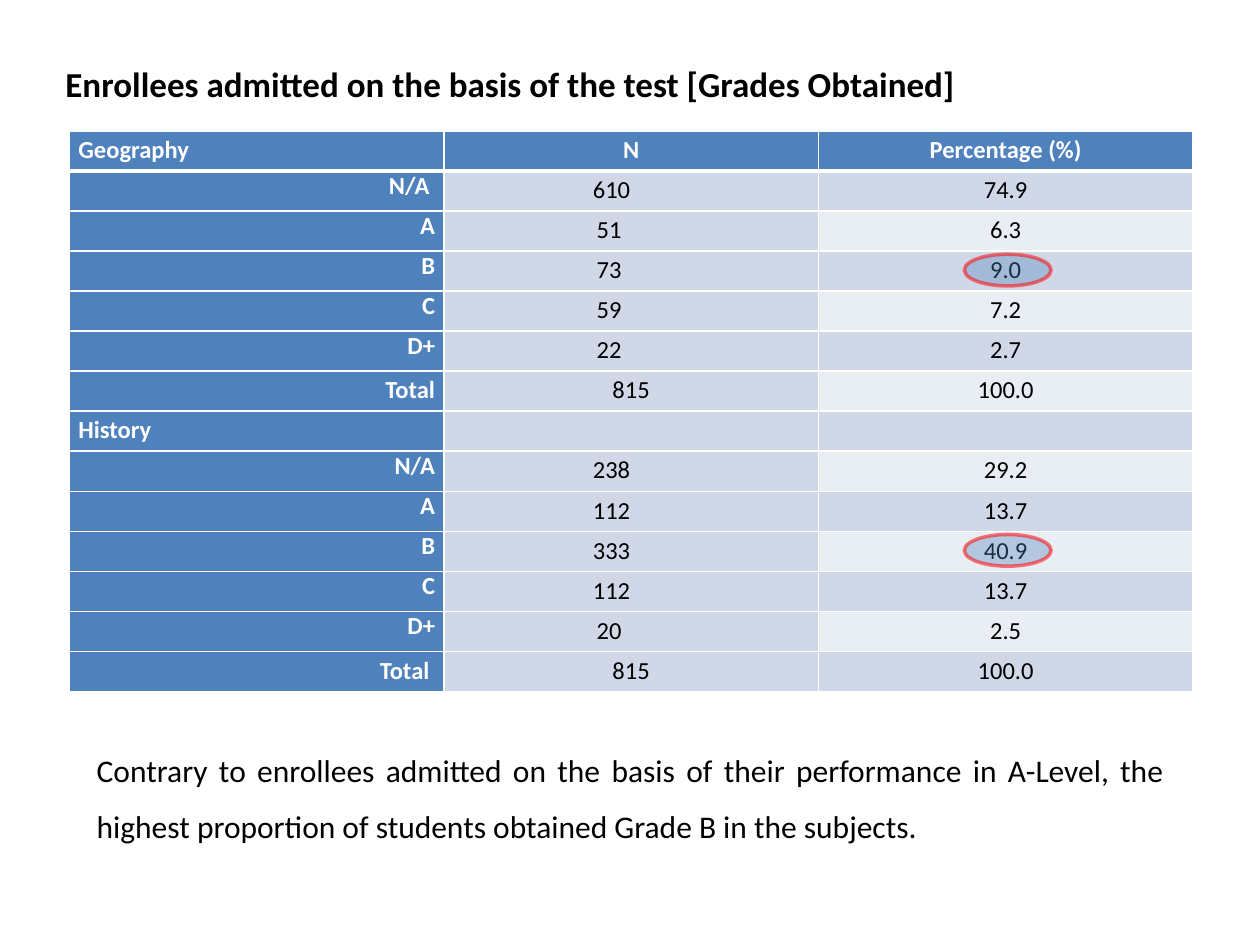
from lxml import etree
from pptx import Presentation
from pptx.dml.color import RGBColor
from pptx.enum.shapes import MSO_SHAPE
from pptx.enum.text import MSO_AUTO_SIZE, PP_ALIGN
from pptx.oxml.ns import qn
from pptx.util import Cm, Pt

LEFT, CENTER, RIGHT = PP_ALIGN.LEFT, PP_ALIGN.CENTER, PP_ALIGN.RIGHT
JUSTIFY = PP_ALIGN.JUSTIFY
OVAL = MSO_SHAPE.OVAL
GROW = MSO_AUTO_SIZE.SHAPE_TO_FIT_TEXT

BLUE, BAND, PALE = "4F81BD", "D0D8E8", "E9EDF4"
WHITE, BLACK, RED = "FFFFFF", "000000", "FF0000"

HEADINGS = ("Geography", "N", "Percentage (%)")
RESULTS = [
    HEADINGS,
    ("N/A ", "610", "74.9"),
    ("A", "51", "6.3"),
    ("B", "73", "9.0"),
    ("C", "59", "7.2"),
    ("D+", "22", "2.7"),
    ("Total", "815", "100.0"),
    ("History", "", ""),
    ("N/A", "238", "29.2"),
    ("A", "112", "13.7"),
    ("B", "333", "40.9"),
    ("C", "112", "13.7"),
    ("D+", "20", "2.5"),
    ("Total ", "815", "100.0"),
]
SUBJECTS = ("Geography", "History")
HIGHLIGHTED_ROWS = (3, 10)
COUNT_SHIFT = {2: 0.89, 3: 0.79}


def rgb(color):
    return RGBColor.from_string(color)


def write(frame, text, size, color, bold=False, align=LEFT, spacing=None):
    frame.text = text
    paragraph = frame.paragraphs[0]
    paragraph.alignment = align
    if spacing:
        paragraph.line_spacing = spacing
    for run in paragraph.runs:
        run.font.name = "Calibri"
        run.font.size = Pt(size)
        run.font.bold = bold
        run.font.color.rgb = rgb(color)


def add_passage(slide, box, text, size, bold=False, spacing=None):
    frame = slide.shapes.add_textbox(*(Cm(length) for length in box)).text_frame
    frame.word_wrap = True
    frame.auto_size = GROW
    write(frame, text, size, BLACK, bold, JUSTIFY, spacing)


def add_borders(cell, bottom_width):
    properties = cell._tc.get_or_add_tcPr()
    for side, width in (("L", 1), ("R", 1), ("T", 1), ("B", bottom_width)):
        border = etree.SubElement(properties, qn(f"a:ln{side}"), w=str(Pt(width)))
        fill = etree.SubElement(border, qn("a:solidFill"))
        etree.SubElement(fill, qn("a:srgbClr"), val=WHITE)


def fill_cell(cell, text, row, column):
    is_header = row == 0
    is_label = column == 0
    is_total = RESULTS[row][0].strip() == "Total"
    is_grade = is_label and text not in SUBJECTS and not is_total

    side = 0.13 if is_header and not is_label else 0.18
    shifted = column == 1 and text and not is_header and not is_total
    cell.margin_left = Cm(side)
    cell.margin_right = Cm(side + (COUNT_SHIFT[len(text)] if shifted else 0))
    cell.margin_top = cell.margin_bottom = 0

    add_borders(cell, 3 if is_header else 1)
    blue = is_header or is_label
    pale = column == 2 and row % 2 == 0
    cell.fill.solid()
    cell.fill.fore_color.rgb = rgb(BLUE if blue else PALE if pale else BAND)

    if text:
        align = CENTER if not is_label else LEFT if text in SUBJECTS else RIGHT
        write(cell.text_frame, text, 14, WHITE if blue else BLACK, blue, align,
              None if is_grade else 1.15)


def set_opacity(fill_parent, percent):
    color = fill_parent.find(f"{qn('a:solidFill')}/{qn('a:srgbClr')}")
    etree.SubElement(color, qn("a:alpha"), val=str(percent * 1000))


def add_highlight(slide, center_x, center_y):
    width, height = 1.75, 0.64
    ring = slide.shapes.add_shape(OVAL, Cm(center_x - width / 2),
                                  Cm(center_y - height / 2), Cm(width), Cm(height))
    ring.shadow.inherit = False
    ring.fill.solid()
    ring.fill.fore_color.rgb = rgb(BLUE)
    ring.line.color.rgb = rgb(RED)
    ring.line.width = Pt(2)
    properties = ring._element.spPr
    set_opacity(properties, 35)
    set_opacity(properties.find(qn("a:ln")), 52)


def add_results(slide, left, top, width, height):
    row_height = height / len(RESULTS)
    column_width = width / len(HEADINGS)
    table = slide.shapes.add_table(len(RESULTS), len(HEADINGS), Cm(left), Cm(top),
                                   Cm(width), Cm(height)).table
    table.horz_banding = False
    for row, values in enumerate(RESULTS):
        table.rows[row].height = Cm(row_height)
        for column, text in enumerate(values):
            fill_cell(table.cell(row, column), text, row, column)
    for row in HIGHLIGHTED_ROWS:
        add_highlight(slide, left + 2.5 * column_width + 0.04,
                      top + (row + 0.5) * row_height - 0.02)


def main():
    presentation = Presentation()
    presentation.slide_width, presentation.slide_height = Cm(25.4), Cm(19.05)
    slide = presentation.slides.add_slide(presentation.slide_layouts[6])
    add_passage(slide, (1.07, 1.14, 21.59, 1.12),
                "Enrollees admitted on the basis of the test [Grades Obtained]",
                20, bold=True)
    add_results(slide, 1.4, 2.64, 22.65, 11.3)
    add_passage(slide, (1.7, 14.63, 22.02, 2.57),
                "Contrary to enrollees admitted on the basis of their performance in "
                "A-Level, the highest proportion of students obtained Grade B in the "
                "subjects.", 18, spacing=1.5)
    presentation.save("out.pptx")


if __name__ == "__main__":
    main()
